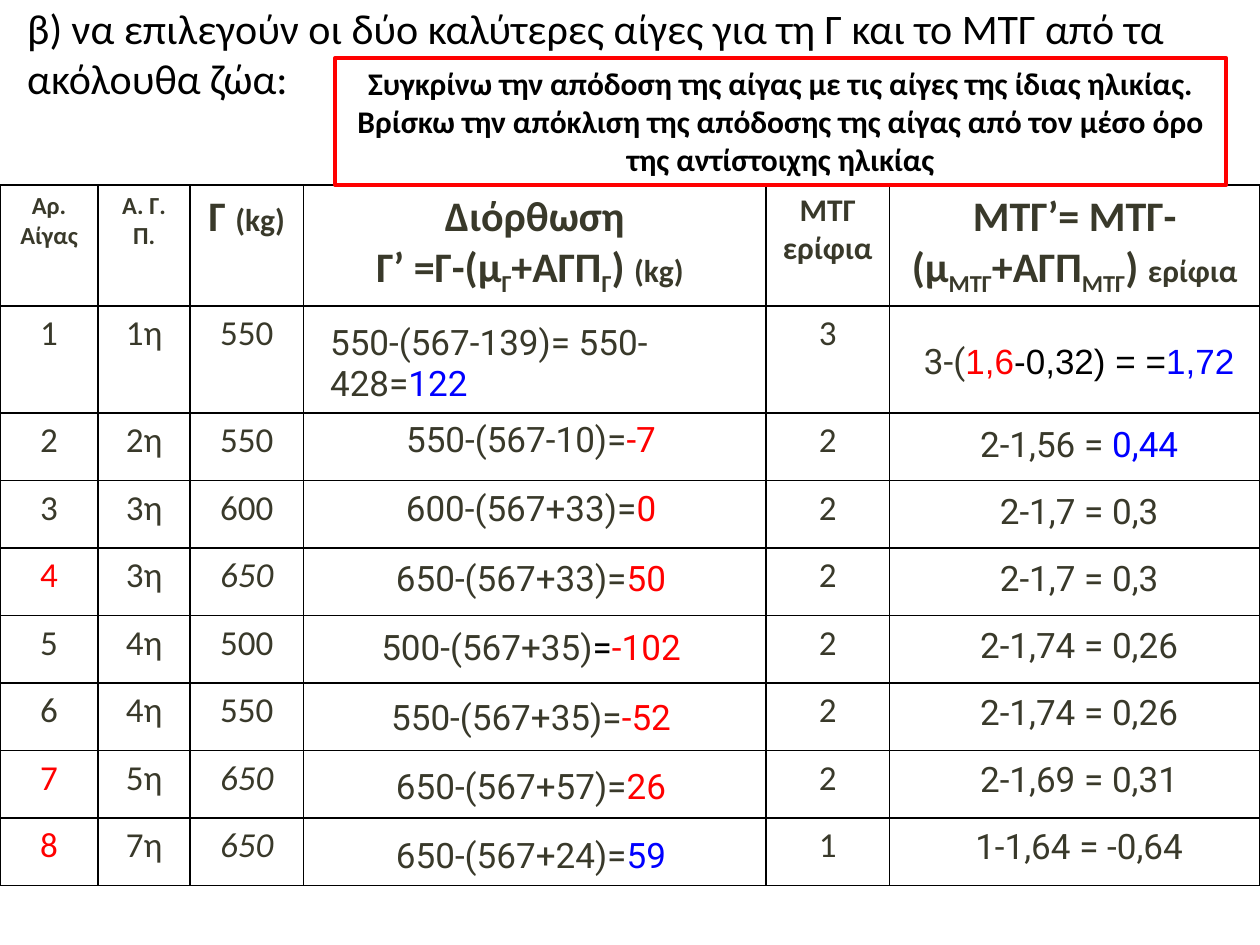
from lxml.etree import SubElement
from pptx import Presentation
from pptx.dml.color import RGBColor
from pptx.enum.shapes import MSO_SHAPE
from pptx.enum.text import MSO_ANCHOR, PP_ALIGN
from pptx.oxml.ns import qn
from pptx.util import Cm, Pt

BLACK = RGBColor(0, 0, 0)
OLIVE = RGBColor(0x39, 0x39, 0x2A)
RED = RGBColor(0xFF, 0, 0)
BLUE = RGBColor(0, 0, 0xFF)
NO_STYLE = "{2D5ABB26-0587-4C30-8999-92F81FD0307C}"


def add_plain_table(left, top, widths, heights):
    """Add a table without style, banding or fill."""
    frame = slide.shapes.add_table(len(heights), len(widths), Cm(left), Cm(top),
                                   Cm(sum(widths)), Cm(sum(heights)))
    table = frame.table
    table.first_row = table.horz_banding = False
    table._tbl.tblPr.find(qn("a:tableStyleId")).text = NO_STYLE
    for column, width in zip(table.columns, widths):
        column.width = Cm(width)
    for row, height in zip(table.rows, heights):
        row.height = Cm(height)
    for cell in table.iter_cells():
        cell.fill.background()
    return table


def write(para, runs, size, font="Calibri", color=OLIVE, bold=False, align=PP_ALIGN.CENTER):
    """Fill a paragraph; a run is (text, {font attribute or color or subscript: value})."""
    para.alignment = align
    para.font.size, para.font.name, para.font.bold = Pt(size), font, bold
    para.font.color.rgb = color
    for text, style in runs:
        span = para.add_run()
        span.text = text
        for key, value in style.items():
            if key == "color":
                span.font.color.rgb = value
            elif key == "subscript":
                span._r.get_or_add_rPr().set("baseline", "-25000")
            else:
                setattr(span.font, key, value)


deck = Presentation()
deck.slide_width, deck.slide_height = Cm(25.4), Cm(19.05)
slide = deck.slides.add_slide(deck.slide_layouts[6])

# Question
title = slide.shapes.add_textbox(Cm(0.3), Cm(0), Cm(23.65), Cm(2.13)).text_frame
title.word_wrap = True
title.vertical_anchor = MSO_ANCHOR.MIDDLE
question = "β) να επιλεγούν οι δύο καλύτερες αίγες για τη Γ και το ΜΤΓ από τα ακόλουθα ζώα:"
write(title.paragraphs[0], [(question, {})], 24, color=BLACK, align=PP_ALIGN.LEFT)

# Goats: number, lactation, milk, kids
SMALL = {"size": Pt(18)}
SUB = {"subscript": True}
goats = add_plain_table(0, 3.73, [1.98, 1.85, 2.29, 9.32, 2.49, 7.47], [2.44, 2.16] + [1.36] * 7)
for cell in goats.iter_cells():
    properties = cell._tc.get_or_add_tcPr()
    lines = []
    for side in ("a:lnL", "a:lnR", "a:lnT", "a:lnB"):
        line = SubElement(properties, qn(side), w=str(Pt(1)))
        fill = SubElement(line, qn("a:solidFill"))
        SubElement(fill, qn("a:srgbClr"), val=str(BLACK))
        lines.append(line)
    for position, line in enumerate(lines):
        properties.insert(position, line)

headers = [
    (14, [[("Αρ. Αίγας", {})]]),
    (14, [[("Α. Γ. Π.", {})]]),
    (24, [[("Γ ", {}), ("(kg)", SMALL)]]),
    (24, [[("Διόρθωση", {})],
          [("Γ’ =Γ-(μ", {}), ("Γ", SUB), ("+ΑΓΠ", {}), ("Γ", SUB), (") ", {}),
           ("(kg)", SMALL), (" ", {})]]),
    (18, [[("ΜΤΓ ερίφια", {})]]),
    (24, [[("ΜΤΓ’= ΜΤΓ-(μ", {}), ("ΜΤΓ", SUB), ("+ΑΓΠ", {}), ("ΜΤΓ", SUB), (") ", {}),
           ("ερίφια", SMALL)]]),
]
for column, (size, paragraphs) in enumerate(headers):
    text_frame = goats.cell(0, column).text_frame
    for number, runs in enumerate(paragraphs):
        para = text_frame.add_paragraph() if number else text_frame.paragraphs[0]
        write(para, runs, size, bold=True)

records = [("1η", 550, 3), ("2η", 550, 2), ("3η", 600, 2), ("3η", 650, 2),
           ("4η", 500, 2), ("4η", 550, 2), ("5η", 650, 2), ("7η", 650, 1)]
for number, (lactation, milk, kids) in enumerate(records, 1):
    best = milk == 650
    values = {0: (number, {"color": RED} if best else {}), 1: (lactation, {}),
              2: (milk, {"italic": True} if best else {}), 4: (kids, {})}
    for column, (value, style) in values.items():
        para = goats.cell(number, column).text_frame.paragraphs[0]
        write(para, [(str(value), style)], 20)

# Corrected milk yield
corrections = [
    ("550-(567-139)= 550-428=", "122", BLUE), ("550-(567-10)=", "-7", RED),
    ("600-(567+33)=", "0", RED), ("650-(567+33)=", "50", RED),
    ("500-(567+35)", "-102", RED), ("550-(567+35)=", "-52", RED),
    ("650-(567+57)=", "26", RED), ("650-(567+24)=", "59", BLUE),
]
milk_table = add_plain_table(6.4, 6.38, [8.61], [1.96] + [1.4] * 7)
for row, (formula, result, color) in enumerate(corrections):
    runs = [(formula, {}), (result, {"color": color})]
    if not formula.endswith("="):
        runs.insert(1, ("=", {"color": BLACK}))
    write(milk_table.cell(row, 0).text_frame.paragraphs[0], runs, 20, "Roboto",
          align=PP_ALIGN.CENTER if row else PP_ALIGN.LEFT)

# Corrected number of kids
kid_runs = [
    [("3-(", {}), ("1,6", {"name": "Arial", "color": RED}),
     ("-0,32) = =", {"name": "Arial", "color": BLACK}),
     ("1,72", {"name": "Arial", "color": BLUE})],
    [("2-1,56 = ", {}), ("0,44", {"color": BLUE})],
]
kid_runs += [[(text, {})] for text in (
    "2-1,7 = 0,3", "2-1,7 = 0,3", "2-1,74 = 0,26", "2-1,74 = 0,26",
    "2-1,69 = 0,31", "1-1,64 = -0,64")]
kid_table = add_plain_table(18.11, 6.76, [7.29], [1.68] + [1.35] * 7)
for row, runs in enumerate(kid_runs):
    write(kid_table.cell(row, 0).text_frame.paragraphs[0], runs, 20, "Roboto")

# Method
box = slide.shapes.add_shape(MSO_SHAPE.RECTANGLE, Cm(6.76), Cm(1.17), Cm(17.96), Cm(2.56))
box.shadow.inherit = False
box.fill.background()
box.line.color.rgb = RED
box.line.width = Pt(2.25)
box.text_frame.word_wrap = True
box.text_frame.vertical_anchor = MSO_ANCHOR.TOP
method = ("Συγκρίνω την απόδοση της αίγας με τις αίγες της ίδιας ηλικίας. Βρίσκω την απόκλιση "
          "της απόδοσης της αίγας από τον μέσο όρο της αντίστοιχης ηλικίας")
write(box.text_frame.paragraphs[0], [(method, {})], 18, color=BLACK, bold=True)

deck.save("out.pptx")
